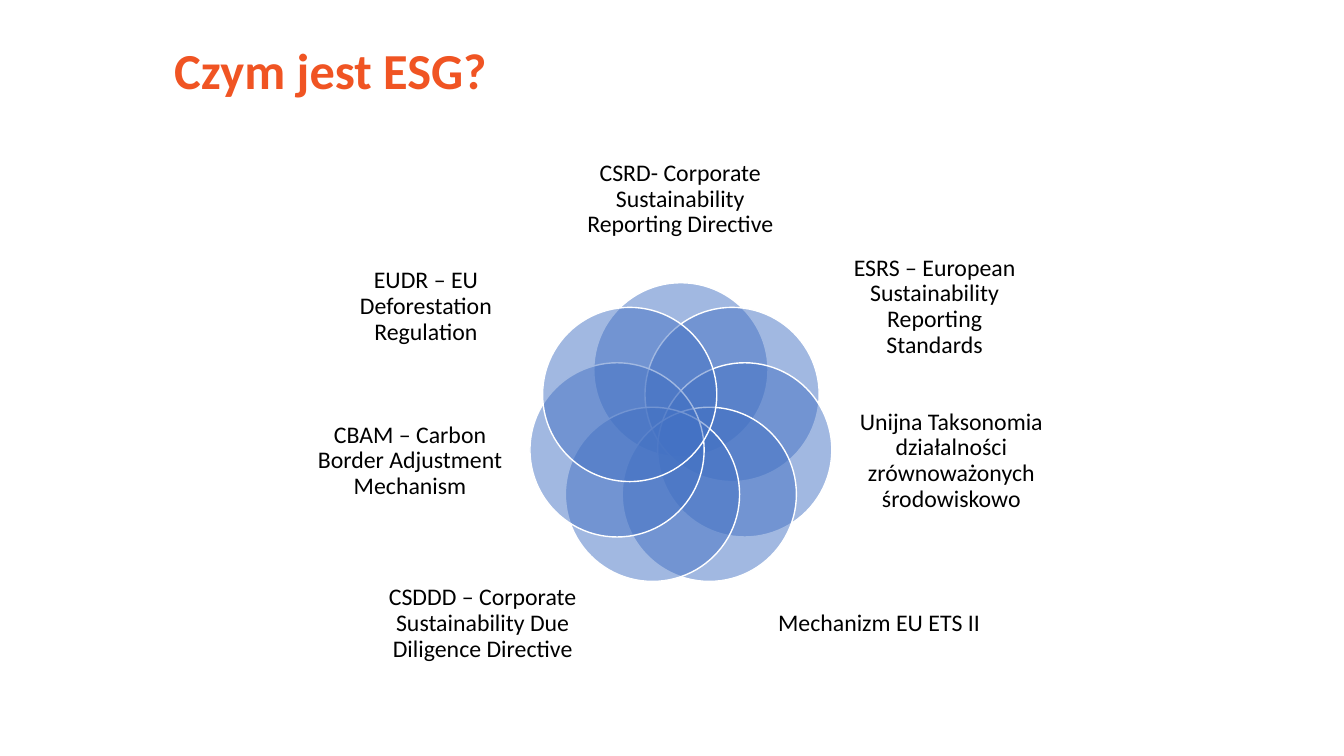
from math import cos, pi, sin

from lxml.etree import SubElement
from pptx import Presentation
from pptx.dml.color import RGBColor
from pptx.enum.shapes import MSO_SHAPE
from pptx.enum.text import MSO_ANCHOR, PP_ALIGN
from pptx.oxml.ns import qn
from pptx.util import Cm, Pt

ORANGE = RGBColor(0xF0, 0x54, 0x23)
BLUE = RGBColor(0x44, 0x72, 0xC4)
WHITE = RGBColor(0xFF, 0xFF, 0xFF)
BLACK = RGBColor(0x00, 0x00, 0x00)

CENTER_X, CENTER_Y = 17.16, 10.97
RING_RADIUS = 1.65
DIAMETER = 4.39

LABELS = [
    ("CSRD- Corporate Sustainability Reporting Directive", 14.63, 3.68, 5.03, 2.69),
    ("ESRS – European Sustainability Reporting Standards", 21.18, 6.25, 4.75, 2.97),
    ("Unijna Taksonomia działalności zrównoważonych środowiskowo", 21.64, 10.03, 4.67, 3.18),
    ("Mechanizm EU ETS II", 19.08, 14.27, 6.15, 2.9),
    ("CSDDD – Corporate Sustainability Due Diligence Directive", 9.65, 14.27, 5.03, 2.9),
    ("CBAM – Carbon Border Adjustment Mechanism", 8, 10.03, 4.67, 3.18),
    ("EUDR – EU Deforestation Regulation", 8.36, 6.25, 4.75, 2.97),
]


class SlideBuilder:
    """Draws styled elements on the current slide."""

    font_name = "Calibri"
    line_spacing = 0.9

    def __init__(self, slide):
        self.shapes = slide.shapes

    def text(self, text, left, top, width, height, size, color):
        box = self.shapes.add_textbox(Cm(left), Cm(top), Cm(width), Cm(height))
        frame = box.text_frame
        frame.text = text
        frame.word_wrap = True
        frame.vertical_anchor = MSO_ANCHOR.MIDDLE
        para = frame.paragraphs[0]
        para.line_spacing = self.line_spacing
        font = para.runs[0].font
        font.name = self.font_name
        font.size = Pt(size)
        font.color.rgb = color
        return frame

    def title(self, text):
        frame = self.text(text, 4.14, 0.51, 28.8, 2.69, 36, ORANGE)
        frame.paragraphs[0].runs[0].font.bold = True

    def label(self, text, left, top, width, height):
        frame = self.text(text, left, top, width, height, 17, BLACK)
        frame.margin_left = frame.margin_right = 0
        frame.margin_top = frame.margin_bottom = 0
        frame.paragraphs[0].alignment = PP_ALIGN.CENTER

    def petal(self, angle):
        left = CENTER_X + RING_RADIUS * sin(angle) - DIAMETER / 2
        top = CENTER_Y - RING_RADIUS * cos(angle) - DIAMETER / 2
        circle = self.shapes.add_shape(
            MSO_SHAPE.OVAL, Cm(left), Cm(top), Cm(DIAMETER), Cm(DIAMETER))
        circle.shadow.inherit = False
        circle.fill.solid()
        circle.fill.fore_color.rgb = BLUE
        color = circle.fill._xPr.find(qn("a:solidFill"))[0]
        SubElement(color, qn("a:alpha"), val="50000")
        circle.line.color.rgb = WHITE
        circle.line.width = Pt(1)


def main():
    deck = Presentation()
    deck.slide_width, deck.slide_height = Cm(33.87), Cm(19.05)
    page = SlideBuilder(deck.slides.add_slide(deck.slide_layouts[6]))
    page.title("Czym jest ESG?")
    for index, label in enumerate(LABELS):
        page.petal(2 * pi * index / len(LABELS))
        page.label(*label)
    deck.save("out.pptx")


if __name__ == "__main__":
    main()
